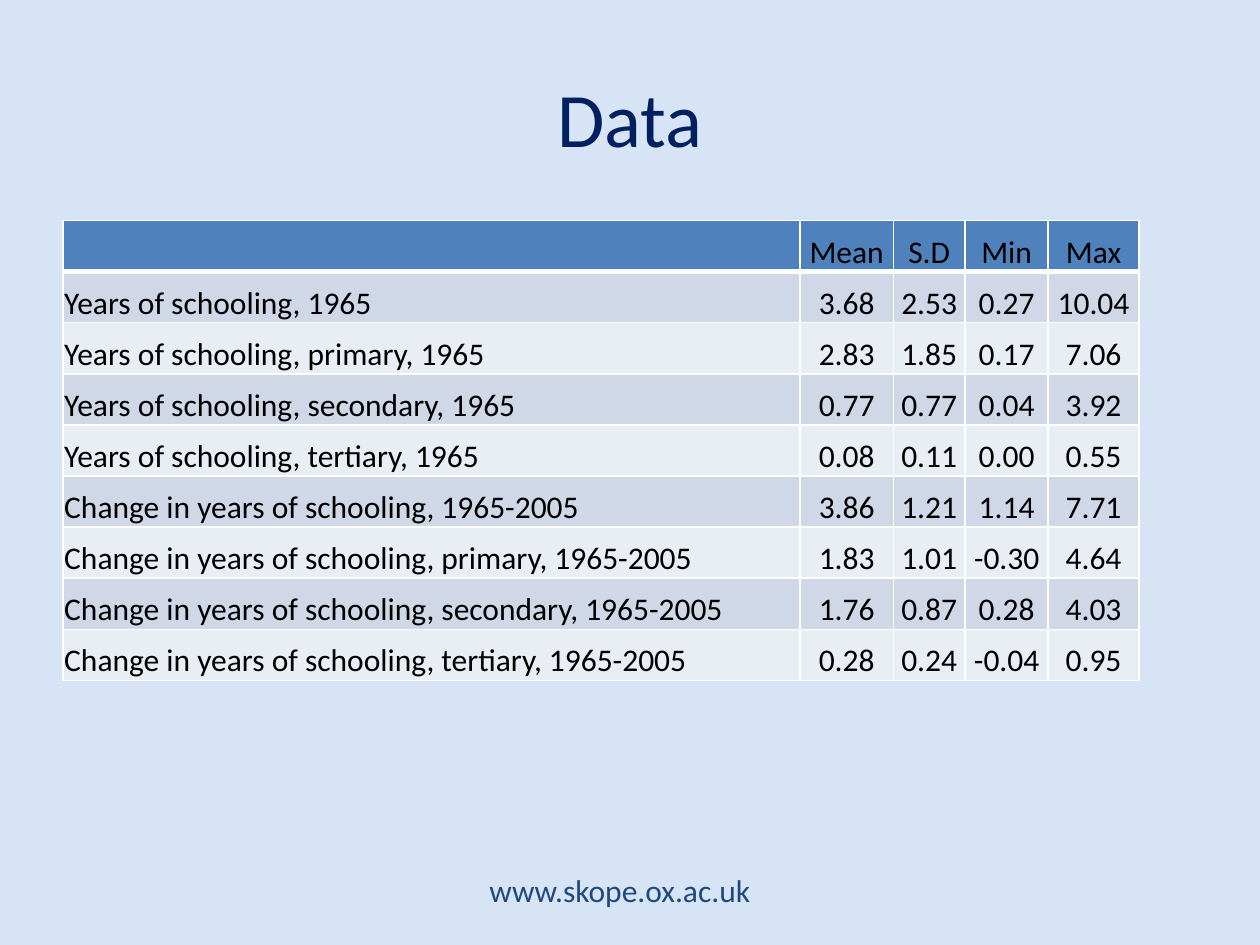
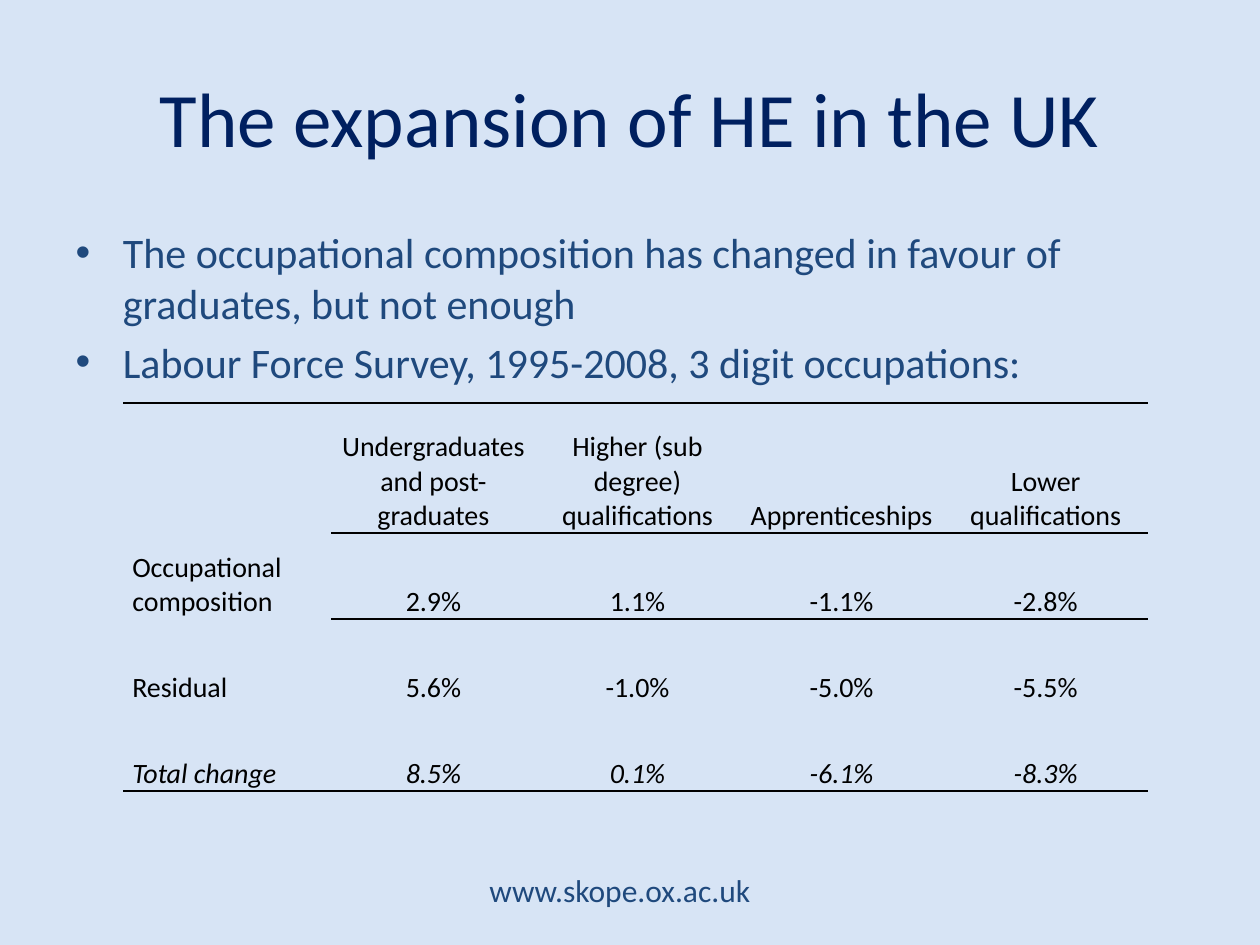
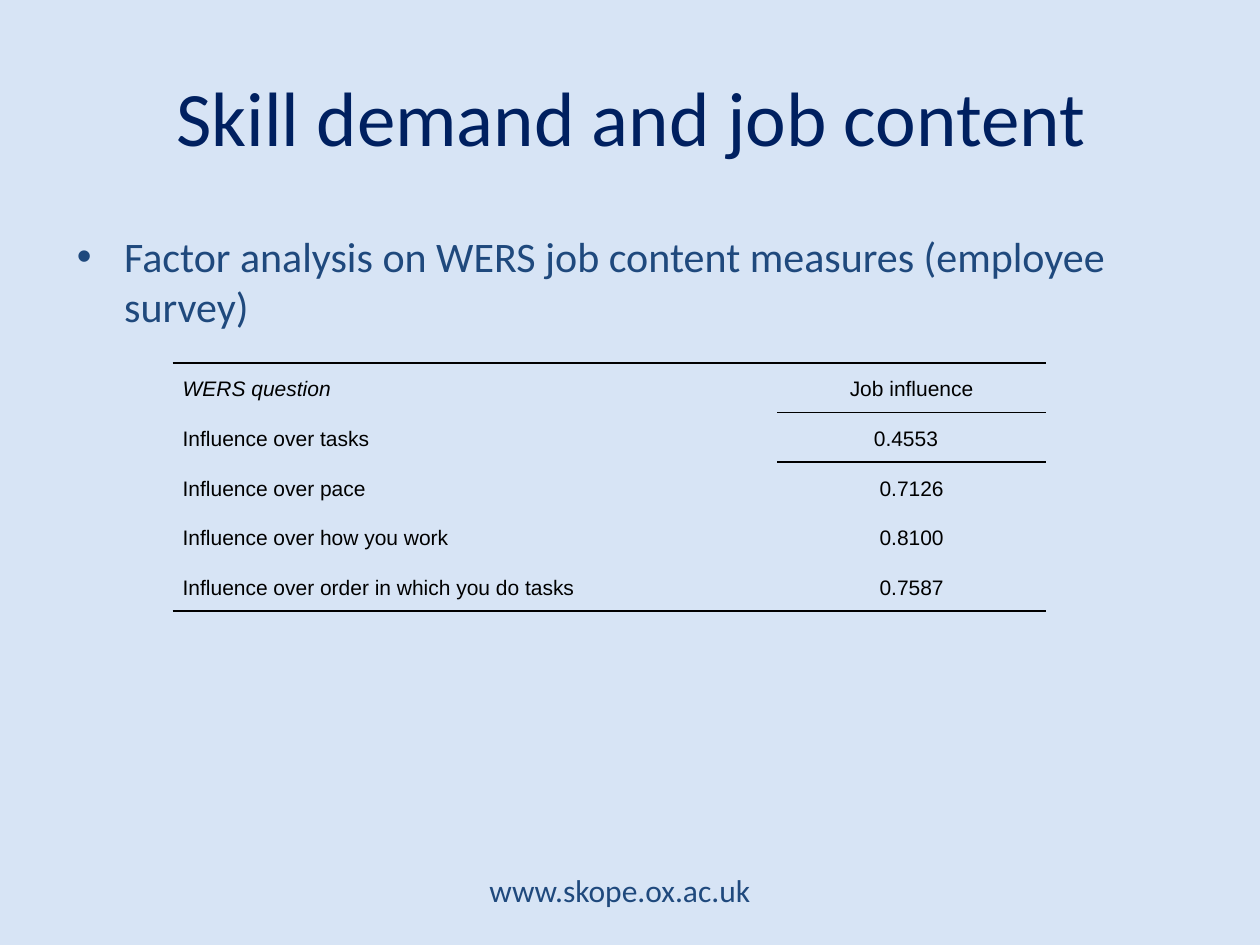
"""Build three slides on schooling data, higher education and job content."""
from dataclasses import dataclass

from lxml import etree
from pptx import Presentation
from pptx.dml.color import RGBColor
from pptx.enum.text import MSO_ANCHOR, MSO_AUTO_SIZE, PP_ALIGN
from pptx.oxml.ns import qn
from pptx.util import Inches, Pt

LEFT, CENTER = PP_ALIGN.LEFT, PP_ALIGN.CENTER
MIDDLE, BOTTOM = MSO_ANCHOR.MIDDLE, MSO_ANCHOR.BOTTOM
NO_FIT, GROW = MSO_AUTO_SIZE.NONE, MSO_AUTO_SIZE.SHAPE_TO_FIT_TEXT
PLAIN = "{2D5ABB26-0587-4C30-8999-92F81FD0307C}"


@dataclass(frozen=True)
class Theme:
    back: str = "D7E4F5"
    title: str = "002060"
    text: str = "1F497D"
    ink: str = "000000"
    white: str = "FFFFFF"
    head: str = "4F81BD"
    bands: tuple = ("E9EDF4", "D0D8E8")
    font: str = "Calibri"
    sans: str = "Arial"
    big: int = 44
    body: int = 24
    mid: int = 18
    small: int = 16
    tiny: int = 12


theme = Theme()


def style(para, size, color, font=theme.font, align=None):
    para.alignment = align
    para.font.name = font
    para.font.size = Pt(size)
    para.font.color.rgb = RGBColor.from_string(color)


def grid(slide, at, cols, rows, data, size, font, pad, anchor, rule, color):
    spot = [Inches(n) for n in (*at, sum(cols), sum(rows))]
    table = slide.shapes.add_table(len(rows), len(cols), *spot).table
    table._tbl.tblPr.find(qn("a:tableStyleId")).text = PLAIN
    for col, width in zip(table.columns, cols):
        col.width = Inches(width)
    for r, line in enumerate(data):
        table.rows[r].height = Inches(rows[r])
        for c, text in enumerate(line):
            cell = table.cell(r, c)
            cell.text = text
            cell.vertical_anchor = anchor
            cell.margin_left = cell.margin_right = Inches(pad)
            cell.margin_top = cell.margin_bottom = 0
            cell.fill.background()
            style(cell.text_frame.paragraphs[0], size, theme.ink, font, CENTER if c else LEFT)
            props = cell._tc.get_or_add_tcPr()
            for i, (side, width) in enumerate(rule(r, c).items()):
                edge = etree.Element(qn(f"a:ln{side}"), w=str(Pt(width)))
                fill = etree.SubElement(edge, qn("a:solidFill"))
                etree.SubElement(fill, qn("a:srgbClr"), val=color)
                props.insert(i, edge)
    return table


prs = Presentation()
prs.slide_width, prs.slide_height = Inches(10), Inches(7.5)
master = prs.slide_master
master.background.fill.solid()
master.background.fill.fore_color.rgb = RGBColor.from_string(theme.back)

pages = [
    ("Data", []),
    ("The expansion of HE in the UK", [
        "The occupational composition has changed in favour of graduates, but not enough",
        "Labour Force Survey, 1995-2008, 3 digit occupations:",
    ]),
    ("Skill demand and job content", [
        "Factor analysis on WERS job content measures (employee survey)",
    ]),
]
slides = []
for title, points in pages:
    slide = prs.slides.add_slide(prs.slide_layouts[1 if points else 5])
    slides.append(slide)
    slide.shapes.title.text = title
    style(slide.shapes.title.text_frame.paragraphs[0], theme.big, theme.title, align=CENTER)
    if points:
        frame = slide.placeholders[1].text_frame
        frame.text = "\n".join(points)
        frame.auto_size = NO_FIT
        for para in frame.paragraphs:
            style(para, theme.body, theme.text)
        frame.paragraphs[0].space_before = Pt(0)
data, growth, jobs = slides

foot = data.shapes.add_textbox(Inches(3.2), Inches(6.86), Inches(3.44), Inches(0.4))
foot.text_frame.text = "www.skope.ox.ac.uk"
foot.text_frame.word_wrap = True
foot.text_frame.auto_size = GROW
foot.text_frame.vertical_anchor = MIDDLE
style(foot.text_frame.paragraphs[0], theme.mid, theme.text, align=CENTER)
master.shapes.element.append(foot.element)

stats = [
    ("", "Mean", "S.D", "Min", "Max"),
    ("Years of schooling, 1965", "3.68", "2.53", "0.27", "10.04"),
    ("Years of schooling, primary, 1965", "2.83", "1.85", "0.17", "7.06"),
    ("Years of schooling, secondary, 1965", "0.77", "0.77", "0.04", "3.92"),
    ("Years of schooling, tertiary, 1965", "0.08", "0.11", "0.00", "0.55"),
    ("Change in years of schooling, 1965-2005", "3.86", "1.21", "1.14", "7.71"),
    ("Change in years of schooling, primary, 1965-2005", "1.83", "1.01", "-0.30", "4.64"),
    ("Change in years of schooling, secondary, 1965-2005", "1.76", "0.87", "0.28", "4.03"),
    ("Change in years of schooling, tertiary, 1965-2005", "0.28", "0.24", "-0.04", "0.95"),
]
table = grid(
    data, (0.5, 1.75), [5.85, 0.74, 0.57, 0.66, 0.72], [3.65 / 9] * 9, stats,
    theme.mid, theme.font, 0.01, BOTTOM,
    lambda r, c: {"L": 1, "R": 1, "T": 3 if r == 1 else 1, "B": 1 if r else 3}, theme.white)
for r, row in enumerate(table.rows):
    for cell in row.cells:
        cell.fill.solid()
        cell.fill.fore_color.rgb = RGBColor.from_string(theme.bands[r % 2] if r else theme.head)

shares = [
    ("", "Undergraduates and post-graduates", "Higher (sub degree) qualifications",
     "Apprenticeships", "Lower qualifications"),
    ("Occupational composition", "2.9%", "1.1%", "-1.1%", "-2.8%"),
    ("Residual", "5.6%", "-1.0%", "-5.0%", "-5.5%"),
    ("Total change", "8.5%", "0.1%", "-6.1%", "-8.3%"),
]
scores = [
    ("WERS question", "Job influence"),
    ("Influence over tasks", "0.4553"),
    ("Influence over pace", "0.7126"),
    ("Influence over how you work", "0.8100"),
    ("Influence over order in which you do tasks", "0.7587"),
]


def ruled(last):
    return lambda r, c: {
        **({"T": 1} if r == 0 or (r == 1 and c) else {}),
        **({"B": 1} if r == last or (r == 0 and c) else {}),
    }


table = grid(
    growth, (0.98, 3.2), [1.65] + [1.62] * 4, [1.03] + [2.05 / 3] * 3, shares,
    theme.small, theme.font, 0.07, BOTTOM, ruled(3), theme.ink)
for cell in table.rows[3].cells:
    cell.text_frame.paragraphs[0].font.italic = True

title, body = jobs.shapes.title, jobs.placeholders[1]
for shape, spot in ((title, (0.51, 0.29, 9, 1.25)), (body, (0.51, 1.78, 8.66, 0.71))):
    shape.left, shape.top, shape.width, shape.height = [Inches(n) for n in spot]
table = grid(
    jobs, (1.37, 2.88), [4.8, 2.13], [1.97 / 5] * 5, scores,
    theme.tiny, theme.sans, 0.08, MIDDLE, ruled(4), theme.ink)
for row in table.rows:
    for cell in row.cells:
        cell.text_frame.paragraphs[0].line_spacing = 1.15
table.cell(0, 0).text_frame.paragraphs[0].font.italic = True
table.cell(1, 1).margin_right = Inches(0.17)

prs.save("out.pptx")
